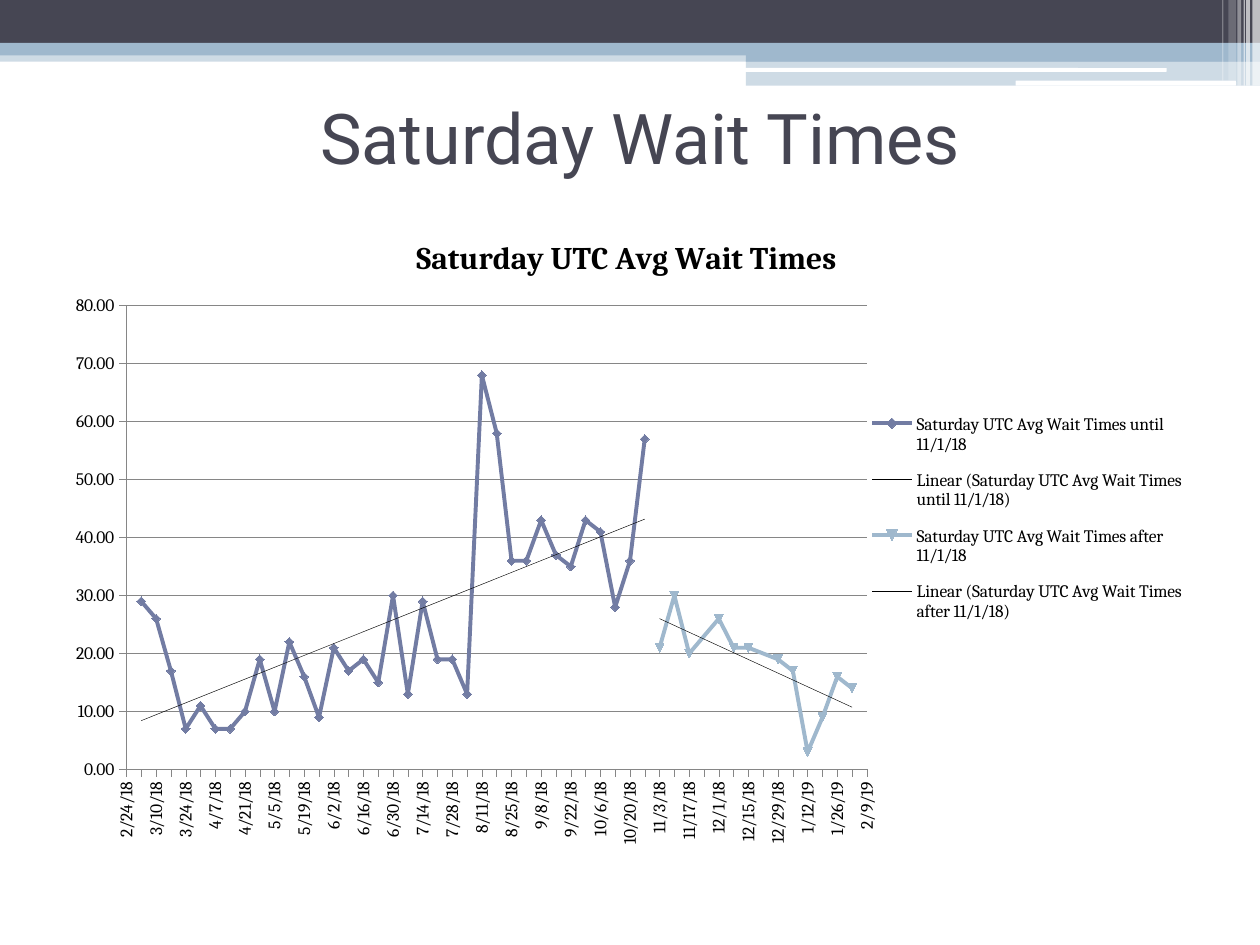
from lxml.etree import SubElement
from pptx import Presentation
from pptx.chart.data import XyChartData
from pptx.dml.color import RGBColor
from pptx.enum.chart import XL_CHART_TYPE, XL_LEGEND_POSITION, XL_MARKER_STYLE, XL_TICK_MARK
from pptx.enum.shapes import MSO_SHAPE
from pptx.enum.text import MSO_ANCHOR, PP_ALIGN
from pptx.oxml import parse_xml
from pptx.oxml.ns import nsdecls, qn
from pptx.util import Inches, Pt

DARK, PALE, WHITE, BLACK, GRID = "464653", "9FB8CD", "FFFFFF", "000000", "868686"
HAIRLINE = Pt(0.25)

# left, top, width, height, colour, opacity in percent, rounded corners
BANDS = [
    (0, 0.4, 10, 0.09, PALE, 50, False),
    (0, 0, 10, 0.34, DARK, 100, False),
    (0, 0.34, 10, 0.1, PALE, 100, False),
    (5.92, 0.39, 4.08, 0.1, PALE, 100, False),
    (5.92, 0.48, 4.08, 0.2, PALE, 50, False),
    (5.91, 0.54, 3.35, 0.03, WHITE, 100, True),
    (8.06, 0.64, 1.75, 0.04, WHITE, 100, True),
]
# left, width, height, opacity in percent
STRIPES = [
    (9.94, 0.06, 0.68, 65), (9.89, 0.03, 0.68, 65), (9.87, 0.01, 0.68, 60),
    (9.82, 0.03, 0.68, 40), (9.75, 0.06, 0.64, 20), (9.7, 0.01, 0.64, 30),
]

FIRST_SATURDAY = 43155  # date serial of 2/24/18
WEEKS = 50
# name, colour, week numbers, average waits
WAITS = [
    ("Saturday UTC Avg Wait Times until 11/1/18", "727CA3", range(1, 36),
     [29, 26, 17, 7, 11, 7, 7, 10, 19, 10, 22, 16, 9, 21, 17, 19, 15, 30,
      13, 29, 19, 19, 13, 68, 58, 36, 36, 43, 37, 35, 43, 41, 28, 36, 57]),
    ("Saturday UTC Avg Wait Times after 11/1/18", PALE,
     [36, 37, 38, 40, 41, 42, 44, 45, 46, 47, 48, 49],
     [21, 30, 20, 26, 21, 21, 19, 17, 3, 9, 16, 14]),
]
# shares of the chart's size
PLOT = {"x": 0.056, "y": 0.137, "w": 0.653, "h": 0.667}
LEGEND = {"x": 0.71, "y": 0.27, "w": 0.28, "h": 0.345}


def rgb(value):
    return RGBColor.from_string(value)


def add_band(slide, left, top, width, height, color, opacity=100, rounded=False):
    kind = MSO_SHAPE.ROUNDED_RECTANGLE if rounded else MSO_SHAPE.RECTANGLE
    band = slide.shapes.add_shape(kind, *map(Inches, (left, top, width, height)))
    band.shadow.inherit = False
    band.line.fill.background()
    band.fill.solid()
    band.fill.fore_color.rgb = rgb(color)
    if opacity < 100:
        swatch = band.element.spPr.find(".//" + qn("a:srgbClr"))
        SubElement(swatch, qn("a:alpha"), val=str(opacity * 1000))


def write(frame, text, *, size, font, color=BLACK, bold=False, align=PP_ALIGN.CENTER):
    paragraph = frame.paragraphs[0]
    paragraph.alignment = align
    run = paragraph.add_run()
    run.text = text
    style(run.font, size, font, color, bold)


def style(font, size, name, color=BLACK, bold=False):
    font.size, font.name, font.bold = Pt(size), name, bold
    font.color.rgb = rgb(color)


def style_line(line, color, width=HAIRLINE):
    line.color.rgb = rgb(color)
    line.width = width


def style_axis(axis, low, high, step, number_format):
    axis.minimum_scale, axis.maximum_scale, axis.major_unit = low, high, step
    axis.major_tick_mark = XL_TICK_MARK.OUTSIDE
    style_line(axis.format.line, GRID)
    axis.tick_labels.number_format = number_format
    axis.tick_labels.number_format_is_linked = False
    style(axis.tick_labels.font, 10, "Cambria")


def add_trend_lines(chart):
    for series in chart.element.xpath(".//c:ser"):
        series.find(qn("c:xVal")).addprevious(parse_xml(
            f'<c:trendline {nsdecls("c", "a")}><c:spPr><a:ln w="{HAIRLINE}"><a:solidFill>'
            f'<a:srgbClr val="{BLACK}"/></a:solidFill></a:ln></c:spPr>'
            '<c:trendlineType val="linear"/><c:dispRSqr val="0"/>'
            '<c:dispEq val="0"/></c:trendline>'))


def place(part, shares, index, target=""):
    """Fix a chart part at the given shares of the chart's size."""
    for layout in part.findall(qn("c:layout")):
        part.remove(layout)
    modes = "".join(f'<c:{side}Mode val="edge"/>' for side in "xy")
    sizes = "".join(f'<c:{side} val="{share}"/>' for side, share in shares.items())
    part.insert(index, parse_xml(
        f'<c:layout {nsdecls("c")}><c:manualLayout>{target}'
        f'{modes}{sizes}</c:manualLayout></c:layout>'))


def add_wait_chart(slide):
    data = XyChartData()
    for name, _, weeks, waits in WAITS:
        series = data.add_series(name)
        for week, wait in zip(weeks, waits):
            series.add_data_point(FIRST_SATURDAY + 7 * week, wait)
    chart = slide.shapes.add_chart(
        XL_CHART_TYPE.XY_SCATTER_LINES,
        *map(Inches, (0.5, 1.67, 9, 5.52)), data).chart
    style(chart.font, 10, "Cambria")

    chart.has_title = True
    write(chart.chart_title.text_frame, "Saturday UTC Avg Wait Times ",
          size=18, font="Cambria", bold=True)
    chart.has_legend = True
    chart.legend.position = XL_LEGEND_POSITION.RIGHT
    chart.legend.include_in_layout = False
    style(chart.legend.font, 10, "Cambria")

    dates, minutes = chart.category_axis, chart.value_axis
    style_axis(dates, FIRST_SATURDAY, FIRST_SATURDAY + 7 * WEEKS, 7, "m/d/yy")
    style_axis(minutes, 0, 80, 10, "0.00")
    dates.has_major_gridlines = False
    minutes.has_major_gridlines = True
    style_line(minutes.major_gridlines.format.line, GRID)
    chart.element.xpath(".//c:valAx[1]/c:txPr/a:bodyPr")[0].set("rot", "-5400000")

    plot = chart.plots[0]
    plot.vary_by_categories = False
    for series, (_, color, _, _) in zip(plot.series, WAITS):
        series.smooth = False
        style_line(series.format.line, color, Pt(2.25))
        marker = series.marker.format
        marker.fill.solid()
        marker.fill.fore_color.rgb = rgb(color)
        marker.line.color.rgb = rgb(color)
    until = plot.series[0].marker
    until.style, until.size = XL_MARKER_STYLE.DIAMOND, 5
    add_trend_lines(chart)
    place(chart.element.xpath(".//c:plotArea")[0], PLOT, 0,
          '<c:layoutTarget val="inner"/>')
    place(chart.element.xpath(".//c:legend")[0], LEGEND, 1)


def main():
    deck = Presentation()
    deck.slide_width, deck.slide_height = Inches(10), Inches(7.5)
    slide = deck.slides.add_slide(deck.slide_layouts[6])
    for band in BANDS:
        add_band(slide, *band)
    for left, width, height, opacity in STRIPES:
        add_band(slide, left, 0, width, height, WHITE, opacity)

    heading = slide.shapes.add_textbox(*map(Inches, (0.58, 0.5, 9, 1.17))).text_frame
    heading.word_wrap = True
    heading.vertical_anchor = MSO_ANCHOR.MIDDLE
    write(heading, "Saturday Wait Times", size=40, font="Roboto", color=DARK)
    add_wait_chart(slide)
    deck.save("out.pptx")


if __name__ == "__main__":
    main()
